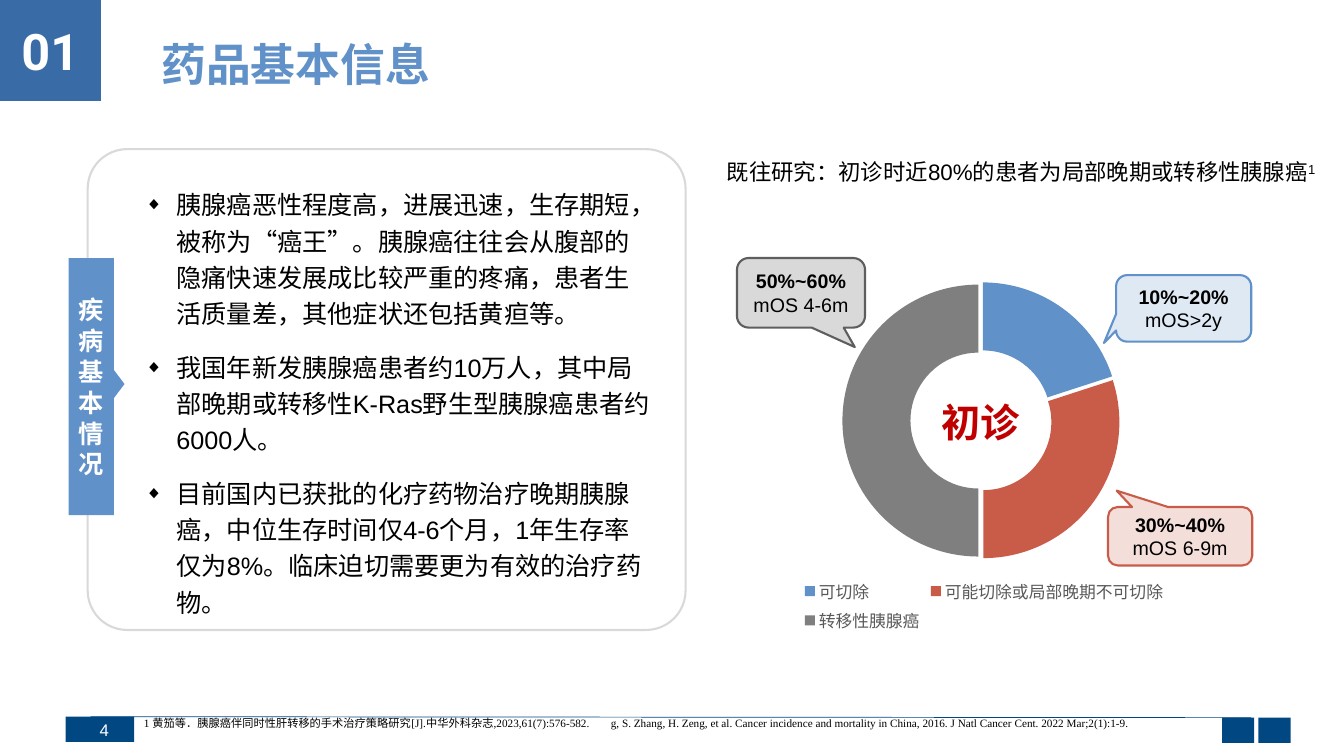
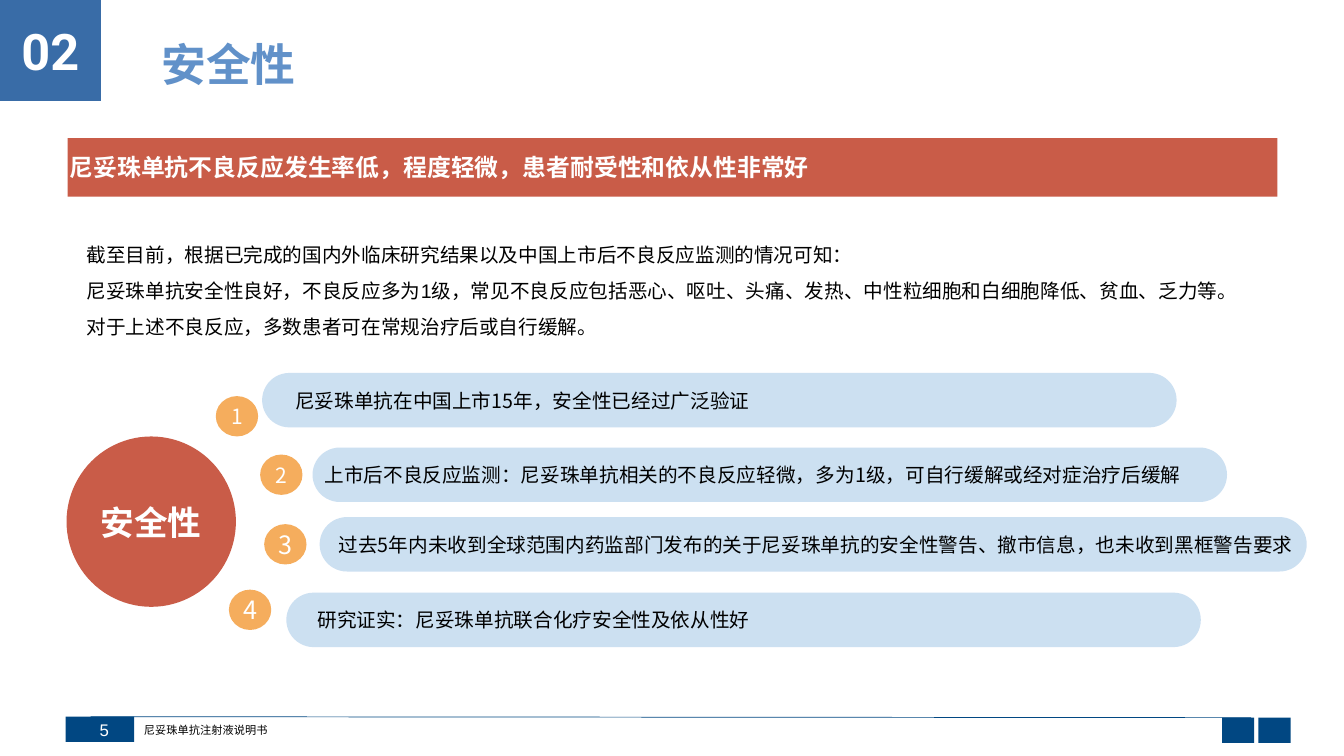
import math

import lxml.etree
import pptx
import pptx.chart.data
import pptx.dml.color
import pptx.enum.chart
import pptx.enum.lang
import pptx.enum.shapes
import pptx.enum.text
import pptx.oxml.ns
import pptx.util

Inches = pptx.util.Inches
Pt = pptx.util.Pt
RGBColor = pptx.dml.color.RGBColor
SHAPE = pptx.enum.shapes.MSO_SHAPE
ALIGN = pptx.enum.text.PP_ALIGN
ANCHOR = pptx.enum.text.MSO_ANCHOR
qn = pptx.oxml.ns.qn

WHITE = RGBColor(0xFF, 0xFF, 0xFF)
BLACK = RGBColor(0, 0, 0)
BADGE_BLUE = RGBColor(0x39, 0x6C, 0xA7)
NAVY = RGBColor(0x01, 0x47, 0x82)
BLUE = RGBColor(0x61, 0x91, 0xC9)
PALE_BLUE = RGBColor(0xDF, 0xE9, 0xF4)
RED = RGBColor(0xC9, 0x5C, 0x48)
PALE_RED = RGBColor(0xF4, 0xDE, 0xDA)
DEEP_RED = RGBColor(0xC0, 0, 0)
GRAY = RGBColor(0x7F, 0x7F, 0x7F)
DARK_GRAY = RGBColor(0x5E, 0x5E, 0x5E)
LEGEND_GRAY = RGBColor(0x59, 0x59, 0x59)
PALE_GRAY = RGBColor(0xD9, 0xD9, 0xD9)
PILL_BLUE = RGBColor(0x5B, 0x9B, 0xD5)
ORANGE = RGBColor(0xF2, 0x8C, 0x1C)
HAN_FONT = "Noto Sans CJK SC"


def add_xml(parent, tag, **attributes):
    """Append a child element with the given attributes."""
    values = {name: str(value) for name, value in attributes.items()}
    return lxml.etree.SubElement(parent, qn(tag), values)


def write(shape, text, size=14, color=BLACK, bold=False, font="Arial",
          align=ALIGN.LEFT, spacing=None, after=0):
    """Add one formatted paragraph to a shape and return it."""
    frame = shape.text_frame
    para = frame.add_paragraph() if frame.text else frame.paragraphs[0]
    para.alignment = align
    para.space_before, para.space_after = Pt(0), Pt(after)
    if spacing:
        para.line_spacing = Pt(spacing)
    span = para.add_run()
    span.text = text
    span.font.size, span.font.bold, span.font.name = Pt(size), bold, font
    span.font.color.rgb = color
    span.font.language_id = pptx.enum.lang.MSO_LANGUAGE_ID.SIMPLIFIED_CHINESE
    add_xml(span._r.get_or_add_rPr(), "a:ea", typeface=HAN_FONT)
    return para


def set_frame(shape, anchor=ANCHOR.MIDDLE, margins=(0.1, 0.05, 0.1, 0.05)):
    """Set wrapping, anchor and margins of a text frame."""
    frame = shape.text_frame
    frame.word_wrap = True
    frame.auto_size = pptx.enum.text.MSO_AUTO_SIZE.NONE
    frame.vertical_anchor = anchor
    (frame.margin_left, frame.margin_top,
     frame.margin_right, frame.margin_bottom) = map(Inches, margins)
    return shape


def set_bullet(para, char=None, indent=0):
    """Give a paragraph a hanging bullet, or none."""
    props = para._p.get_or_add_pPr()
    props.set("marL", str(Inches(indent)))
    props.set("indent", str(-Inches(indent)))
    if char:
        add_xml(props, "a:buSzPct", val=70000)
        add_xml(props, "a:buFont", typeface="Arial")
        add_xml(props, "a:buChar", char=char)
    else:
        add_xml(props, "a:buNone")


def paint(shape, fill=None, line=None, alpha=None):
    """Set fill, outline and opacity, without shadow."""
    shape.shadow.inherit = False
    if fill is None:
        shape.fill.background()
    else:
        shape.fill.solid()
        shape.fill.fore_color.rgb = fill
        if alpha:
            color = shape._element.spPr.find(".//" + qn("a:srgbClr"))
            add_xml(color, "a:alpha", val=alpha * 1000)
    if line is None:
        shape.line.fill.background()
    else:
        shape.line.color.rgb = line
        shape.line.width = Pt(1.5)
    return shape


def add_box(page, kind, box, fill=None, line=None, alpha=None, adjust=()):
    """Add a preset shape in a box, with tight text margins."""
    shape = page.shapes.add_shape(kind, *map(Inches, box))
    for index, value in enumerate(adjust):
        shape.adjustments[index] = value
    return set_frame(paint(shape, fill, line, alpha), margins=(0.02,) * 4)


def add_text(page, box, anchor=ANCHOR.MIDDLE):
    """Add an empty wrapping text box."""
    return set_frame(page.shapes.add_textbox(*map(Inches, box)), anchor)


def move(shape, box):
    """Move a placeholder into a box."""
    shape.left, shape.top, shape.width, shape.height = map(Inches, box)
    return shape


def add_outline(page, points, fill):
    """Add a closed polygon through points in inches."""
    builder = page.shapes.build_freeform(*points[0], scale=Inches(1))
    builder.add_line_segments(points[1:], close=True)
    return paint(builder.convert_to_shape(), fill)


def add_badge(page, box, number):
    """Draw the section number on a leaf with two wide corners."""
    left, top, width, height = box
    right, bottom = left + width, top + height
    corners = [(left, top, 1, 1, 0.03, 0.06), (right, top, -1, 1, 0.22, 0.35),
               (right, bottom, -1, -1, 0.04, 0.06), (left, bottom, 1, -1, 0.21, 0.37)]
    points = []
    for index, (x, y, toward_x, toward_y, wide, high) in enumerate(corners):
        for step in range(11):
            angle = math.radians(180 + 90 * index + 9 * step)
            points.append((x + wide * (toward_x + math.cos(angle)),
                           y + high * (toward_y + math.sin(angle))))
    badge = set_frame(add_outline(page, points, BADGE_BLUE), margins=(0,) * 4)
    write(badge, number, size=36, color=WHITE, bold=True, font="Roboto", align=ALIGN.CENTER)


def add_arrow_button(page, left, top, direction):
    """Draw a navy button with a white chevron."""
    add_box(page, SHAPE.RECTANGLE, (left, top, 0.32, 0.25), NAVY)
    chevron = [(-0.045, -0.07), (-0.045, -0.03), (0, 0), (-0.045, 0.04),
               (-0.045, 0.07), (0.045, 0)]
    points = [(left + 0.16 + direction * x, top + 0.12 + y) for x, y in chevron]
    add_outline(page, points, WHITE)


def add_footer(page, top, number):
    """Draw the footer rule, page number and arrow buttons."""
    rule = page.shapes.add_connector(pptx.enum.shapes.MSO_CONNECTOR.STRAIGHT,
                                     Inches(0.9), Inches(top), Inches(12.41), Inches(top + 0.01))
    rule.line.color.rgb = NAVY
    rule.line.width = Pt(0.5)
    add_xml(rule._element.spPr, "a:effectLst")
    for left, direction in ((12.12, -1), (12.48, 1)):
        add_arrow_button(page, left, top + 0.01, direction)
    add_box(page, SHAPE.RECTANGLE, (0.65, top, 0.68, 0.25), NAVY)
    write(add_text(page, (0.6, top, 0.58, 0.26)), number, size=12, color=WHITE, align=ALIGN.RIGHT)


def start_page(deck, layout, section, title, number):
    """Add a slide with the shared title, badge and footer."""
    page = deck.slides.add_slide(deck.slide_layouts[layout])
    heading = set_frame(move(page.shapes.title, (1.5, 0.21, 11.26, 0.85)))
    write(heading, title, size=32, color=BLUE, bold=True)
    add_badge(page, (0, 0.3, 1.37, 0.64), section)
    add_footer(page, 7.11, number)
    return page


def add_disease_panel(page, box, items):
    """Draw the outlined panel with side label and bullet list."""
    left, top, width, height = box
    add_box(page, SHAPE.ROUNDED_RECTANGLE, box, line=PALE_GRAY, adjust=[0.082])
    label = add_box(page, SHAPE.RECTANGLE, (left - 0.19, top + 1.08, 0.45, 2.55), BLUE)
    write(label, "疾病基本情况", size=18, color=WHITE, bold=True, align=ALIGN.CENTER, spacing=22)
    pointer = add_box(page, SHAPE.ISOSCELES_TRIANGLE, (left + 0.11, top + 2.26, 0.37, 0.14), BLUE)
    pointer.rotation = 90
    body = move(page.placeholders[1], (left + 0.47, top + 0.29, width - 0.71, height - 0.32))
    set_frame(body, ANCHOR.TOP)
    for item in items:
        set_bullet(write(body, item, size=18, spacing=26, after=12), "◆", 0.31)


def add_stage_chart(page, box):
    """Draw the doughnut of disease stages at first diagnosis."""
    data = pptx.chart.data.CategoryChartData()
    data.categories = ["可切除", "可能切除或局部晚期不可切除", "转移性胰腺癌"]
    data.add_series("Series 1", (20, 30, 50))
    kind = pptx.enum.chart.XL_CHART_TYPE.DOUGHNUT
    chart = page.shapes.add_chart(kind, *map(Inches, box), data).chart
    chart.has_title = False
    chart.font.size, chart.font.name = Pt(10), "Arial"
    chart.font.color.rgb = BLACK
    chart.has_legend = True
    chart.legend.position = pptx.enum.chart.XL_LEGEND_POSITION.BOTTOM
    chart.legend.include_in_layout = False
    chart.legend.font.size, chart.legend.font.name = Pt(12), "Arial"
    chart.legend.font.color.rgb = LEGEND_GRAY
    plot = chart.plots[0]
    plot.has_data_labels = False
    plot.vary_by_categories = True
    for index, color in enumerate((BLUE, RED, GRAY)):
        fill = plot.series[0].points[index].format.fill
        fill.solid()
        fill.fore_color.rgb = color
    area = chart.element.find(".//" + qn("c:plotArea"))
    area.find(".//" + qn("c:holeSize")).set("val", "63")
    first_point = area.find(".//" + qn("c:dPt"))
    first_point.addprevious(add_xml(area, "c:explosion", val=4))
    for old in area.findall(qn("c:layout")):
        area.remove(old)
    layout = add_xml(area, "c:layout")
    area.insert(0, layout)
    manual = add_xml(layout, "c:manualLayout")
    for tag, value in (("layoutTarget", "inner"), ("xMode", "edge"), ("yMode", "edge"),
                       ("x", 0.25), ("y", 0.04), ("w", 0.49), ("h", 0.75)):
        add_xml(manual, "c:" + tag, val=value)


def add_callout(page, box, tip, fill, line, share, survival):
    """Draw a callout with the share of patients and survival."""
    callout = add_box(page, SHAPE.ROUNDED_RECTANGULAR_CALLOUT, box, fill, line,
                      adjust=(*tip, 0.167))
    write(callout, share, bold=True, align=ALIGN.CENTER)
    write(callout, survival, align=ALIGN.CENTER)


def build_disease_page(deck):
    """Build the slide on the disease background."""
    page = start_page(deck, 3, "01", "药品基本信息", "4")
    note = write(add_text(page, (1.33, 7.05, 11.43, 0.24)),
                 "1 黄笳等．胰腺癌伴同时性肝转移的手术治疗策略研究[J].中华外科杂志,2023,61(7):576-582.\t"
                 "g, S. Zhang, H. Zeng, et al. Cancer incidence and mortality in China, 2016. "
                 "J Natl Cancer Cent. 2022 Mar;2(1):1-9.", size=8, font="Times New Roman")
    tabs = add_xml(note._p.get_or_add_pPr(), "a:tabLst")
    add_xml(tabs, "a:tab", pos=Inches(4.63), algn="l")
    add_disease_panel(page, (0.87, 1.48, 5.93, 4.77), [
        "胰腺癌恶性程度高，进展迅速，生存期短，被称为“癌王”。胰腺癌往往会从腹部的隐痛快速发展成比较严重的疼痛，患者生活质量差，其他症状还包括黄疸等。",
        "我国年新发胰腺癌患者约10万人，其中局部晚期或转移性K-Ras野生型胰腺癌患者约6000人。",
        "目前国内已获批的化疗药物治疗晚期胰腺癌，中位生存时间仅4-6个月，1年生存率仅为8%。临床迫切需要更为有效的治疗药物。"])
    caption = set_frame(move(page.placeholders[2], (7.11, 1.52, 6.21, 0.37)),
                        margins=(0.1, 0, 0, 0))
    para = write(caption, "既往研究：初诊时近80%的患者为局部晚期或转移性胰腺癌", size=16)
    set_bullet(para)
    mark = para.add_run()
    mark.text = "1"
    mark.font.size, mark.font.name = Pt(16), "Arial"
    mark.font.color.rgb = BLACK
    mark._r.get_or_add_rPr().set("baseline", "30000")
    add_stage_chart(page, (6.94, 2.65, 5.64, 3.67))
    write(add_text(page, (9.24, 3.9, 1.02, 0.57)), "初诊", size=28, color=DEEP_RED, bold=True)
    for callout in (
            ((10.99, 5.03, 1.43, 0.58), (-0.44, -0.78), PALE_RED, RED, "30%~40%", "mOS 6-9m"),
            ((11.07, 2.73, 1.34, 0.66), (-0.59, 0.52), PALE_BLUE, BLUE, "10%~20%", "mOS>2y"),
            ((7.31, 2.56, 1.27, 0.69), (0.42, 0.78), PALE_GRAY, DARK_GRAY, "50%~60%", "mOS 4-6m")):
        add_callout(page, *callout)


def add_safety_point(page, box, text_left, dot, number, size, text):
    """Draw a numbered dot beside a pill holding one statement."""
    left, top, width, height = box
    add_box(page, SHAPE.ROUNDED_RECTANGLE, box, PILL_BLUE, alpha=31, adjust=[0.5])
    line = add_text(page, (text_left, top + 0.1, left + width - text_left + 0.15, height - 0.2))
    write(line, text, font=HAN_FONT)
    circle = add_box(page, SHAPE.OVAL, (*dot, 0.42, 0.4), ORANGE, alpha=71)
    set_frame(circle, margins=(0,) * 4)
    write(circle, str(number), size=size, color=WHITE, font=HAN_FONT, align=ALIGN.CENTER)


def build_safety_page(deck):
    """Build the slide on drug safety."""
    page = start_page(deck, 5, "02", "安全性", "5")
    write(add_text(page, (1.33, 7.12, 11.43, 0.24)), "尼妥珠单抗注射液说明书", size=8)
    band = add_box(page, SHAPE.RECTANGLE, (0.67, 1.37, 12, 0.58), RED)
    write(band, "尼妥珠单抗不良反应发生率低，程度轻微，患者耐受性和依从性非常好",
          size=17, color=WHITE, bold=True)
    summary = add_text(page, (0.76, 2.06, 11.72, 1.53))
    for text in ("截至目前，根据已完成的国内外临床研究结果以及中国上市后不良反应监测的情况可知：",
                 "尼妥珠单抗安全性良好，不良反应多为1级，常见不良反应包括恶心、呕吐、头痛、发热、中性粒细胞和白细胞降低、贫血、乏力等。对于上述不良反应，多数患者可在常规治疗后或自行缓解。"):
        write(summary, text, spacing=25.4)
    hub = add_box(page, SHAPE.OVAL, (0.66, 4.33, 1.68, 1.69), RED)
    write(hub, "安全性", size=24, color=WHITE, bold=True, align=ALIGN.CENTER)
    points = [
        (2.6, 3.7, 9.07, 2.83, (2.14, 3.93), 15, "尼妥珠单抗在中国上市15年，安全性已经过广泛验证"),
        (3.1, 4.44, 9.07, 3.12, (2.58, 4.51), 15,
         "上市后不良反应监测：尼妥珠单抗相关的不良反应轻微，多为1级，可自行缓解或经对症治疗后缓解"),
        (3.17, 5.13, 9.79, 3.26, (2.62, 5.2), 18,
         "过去5年内未收到全球范围内药监部门发布的关于尼妥珠单抗的安全性警告、撤市信息，也未收到黑框警告要求"),
        (2.84, 5.88, 9.07, 3.05, (2.27, 5.85), 18, "研究证实：尼妥珠单抗联合化疗安全性及依从性好")]
    for number, (left, top, width, text_left, dot, size, text) in enumerate(points, 1):
        add_safety_point(page, (left, top, width, 0.54), text_left, dot, number, size, text)


def main():
    """Build and save the deck."""
    deck = pptx.Presentation()
    deck.slide_width, deck.slide_height = Inches(13.33), Inches(7.5)
    build_disease_page(deck)
    build_safety_page(deck)
    deck.save("out.pptx")


if __name__ == "__main__":
    main()
